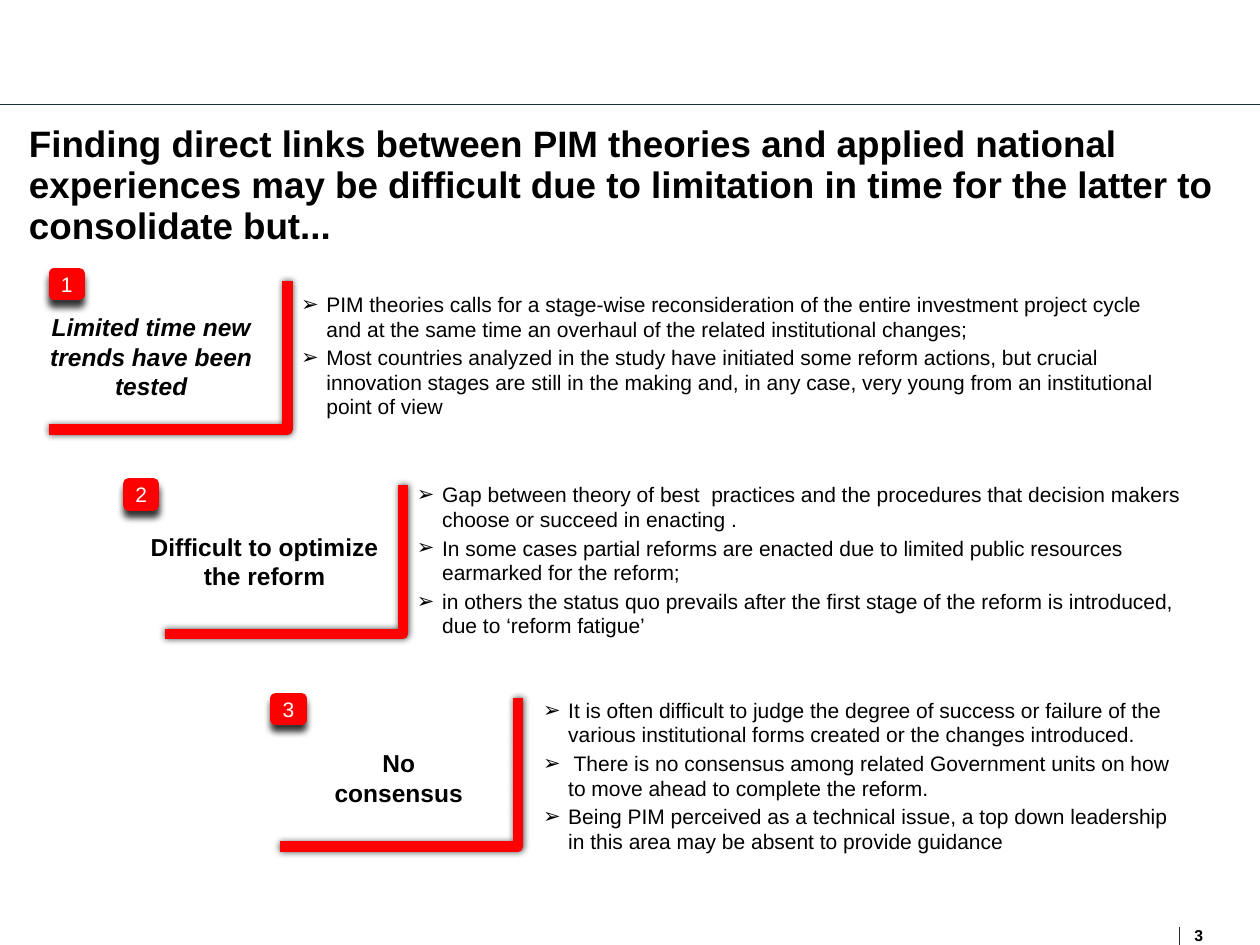
from lxml import etree
from pptx import Presentation
from pptx.dml.color import RGBColor
from pptx.enum.shapes import MSO_CONNECTOR, MSO_SHAPE
from pptx.enum.text import MSO_ANCHOR, PP_ALIGN
from pptx.oxml.ns import qn
from pptx.util import Inches, Pt

STRAIGHT = MSO_CONNECTOR.STRAIGHT
RECTANGLE = MSO_SHAPE.RECTANGLE
MIDDLE = MSO_ANCHOR.MIDDLE
TOP = MSO_ANCHOR.TOP
LEFT = PP_ALIGN.LEFT
CENTER = PP_ALIGN.CENTER

BLACK = RGBColor(0, 0, 0)
WHITE = RGBColor(255, 255, 255)
RED = RGBColor(255, 0, 0)
SLATE = RGBColor(0x17, 0x2F, 0x37)

FONT = "Arial"
BRACKET_WIDTH, BRACKET_HEIGHT = 1.89, 1.18
BADGE_WIDTH, BADGE_HEIGHT = 0.2, 0.17
BULLET_INDENT = 0.2

TITLE = ("Finding direct links between PIM theories and applied national experiences "
         "may be difficult due to limitation in time for the latter to consolidate but...")

SECTIONS = [
    {"number": "1", "badge": (0.43, 2.17), "bracket": (0.39, 2.23),
     "label": "Limited time new trends have been tested", "italic": True,
     "label_box": (0.39, 2.48, 1.62, 0.7), "body_box": (2.39, 2.32, 6.92, 1.02),
     "points": [
         "PIM theories calls for a stage-wise reconsideration of the entire investment "
         "project cycle and at the same time an overhaul of the related institutional changes;",
         "Most countries analyzed in the study have initiated some reform actions, but crucial "
         "innovation stages are still in the making and, in any case, very young from an "
         "institutional point of view"]},
    {"number": "2", "badge": (1.02, 3.84), "bracket": (1.31, 3.85),
     "label": "Difficult to optimize the reform", "italic": False,
     "label_box": (1.17, 4.22, 1.86, 0.47), "body_box": (3.31, 3.83, 6.16, 1.26),
     "points": [
         "Gap between theory of best  practices and the procedures that decision makers "
         "choose or succeed in enacting .",
         "In some cases partial reforms are enacted due to limited public resources "
         "earmarked for the reform;",
         "in others the status quo prevails after the first stage of the reform is "
         "introduced, due to ‘reform fatigue’"]},
    {"number": "3", "badge": (2.19, 5.54), "bracket": (2.22, 5.54),
     "label": "No consensus", "italic": False,
     "label_box": (2.58, 5.94, 1.17, 0.47), "body_box": (4.31, 5.54, 5.09, 1.26),
     "points": [
         "It is often difficult to judge the degree of success or failure of the various "
         "institutional forms created or the changes introduced.",
         " There is no consensus among related Government units on how to move ahead to "
         "complete the reform.",
         "Being PIM perceived as a technical issue, a top down leadership in this area may "
         "be absent to provide guidance"]},
]


def inches(values):
    return [Inches(value) for value in values]


def fill_text(shape, lines, size, color=BLACK, bold=False, italic=False,
              align=LEFT, anchor=TOP, wrap=True):
    frame = shape.text_frame
    frame.margin_left = frame.margin_right = frame.margin_top = frame.margin_bottom = 0
    frame.word_wrap = wrap
    frame.vertical_anchor = anchor
    frame.text = "\n".join(lines)
    for para in frame.paragraphs:
        para.alignment = align
        for span in para.runs:
            span.font.name = FONT
            span.font.size = Pt(size)
            span.font.bold = bold
            span.font.italic = italic
            span.font.color.rgb = color
    return frame.paragraphs


def add_text(page, box, lines, size, **style):
    return fill_text(page.shapes.add_textbox(*inches(box)), lines, size, **style)


def add_bullet(para):
    props = para._p.get_or_add_pPr()
    props.set("marL", str(Inches(BULLET_INDENT)))
    props.set("indent", str(-Inches(BULLET_INDENT)))
    etree.SubElement(props, qn("a:buFont")).set("typeface", FONT)
    etree.SubElement(props, qn("a:buChar")).set("char", "➢")
    para.line_spacing = Pt(14)
    para.space_after = Pt(2.4)


def add_shadow(shape, opacity, blur, distance):
    shape.shadow.inherit = False
    effects = shape._element.spPr.find(qn("a:effectLst"))
    shadow = etree.SubElement(effects, qn("a:outerShdw"), blurRad=str(Pt(blur)),
                              dist=str(Pt(distance)), dir="5400000",
                              algn="ctr", rotWithShape="0")
    color = etree.SubElement(shadow, qn("a:srgbClr"), val=str(BLACK))
    etree.SubElement(color, qn("a:alpha"), val=str(opacity * 1000))


def add_rule(page, start, end):
    rule = page.shapes.add_connector(STRAIGHT, *inches(start + end))
    rule.line.color.rgb = SLATE
    rule.line.width = Pt(0.75)
    etree.SubElement(rule._element.spPr, qn("a:effectLst"))


def add_bracket(page, left, top):
    right, bottom = left + BRACKET_WIDTH, top + BRACKET_HEIGHT
    builder = page.shapes.build_freeform(Inches(left), Inches(bottom))
    builder.add_line_segments([inches((right, bottom)), inches((right, top))], close=False)
    bracket = builder.convert_to_shape()
    bracket.fill.background()
    bracket.line.color.rgb = RED
    bracket.line.width = Pt(6)
    etree.SubElement(bracket.line._get_or_add_ln(), qn("a:round"))
    add_shadow(bracket, 71, 4, 0)


def add_badge(page, left, top, number):
    badge = page.shapes.add_shape(
        RECTANGLE, *inches((left, top, BADGE_WIDTH, BADGE_HEIGHT)))
    badge.fill.solid()
    badge.fill.fore_color.rgb = RED
    badge.line.color.rgb = RED
    badge.line.width = Pt(6.25)
    add_shadow(badge, 80, 4, 4)
    fill_text(badge, [number], 12, color=WHITE, align=CENTER, anchor=MIDDLE, wrap=False)


def add_section(page, section):
    add_bracket(page, *section["bracket"])
    add_badge(page, *section["badge"], section["number"])
    add_text(page, section["label_box"], [section["label"]], 14,
             bold=True, italic=section["italic"], align=CENTER)
    for para in add_text(page, section["body_box"], section["points"], 12):
        add_bullet(para)


def add_header(page, box):
    add_rule(page, (0, 0.83), (10, 0.83))
    title = add_text(page, box, [TITLE], 21, bold=True)
    title[0].line_spacing = 0.93


def add_footer(page, box):
    add_rule(page, (9.36, 7.36), (9.36, 7.5))
    add_text(page, box, ["3"], 9, bold=True)


def main():
    deck = Presentation()
    deck.slide_width, deck.slide_height = Inches(10), Inches(7.5)
    page = deck.slides.add_slide(deck.slide_layouts[6])
    add_header(page, (0.23, 0.99, 9.56, 0.9))
    for section in SECTIONS:
        add_section(page, section)
    add_footer(page, (9.48, 7.35, 0.15, 0.14))
    deck.save("out.pptx")


if __name__ == "__main__":
    main()
